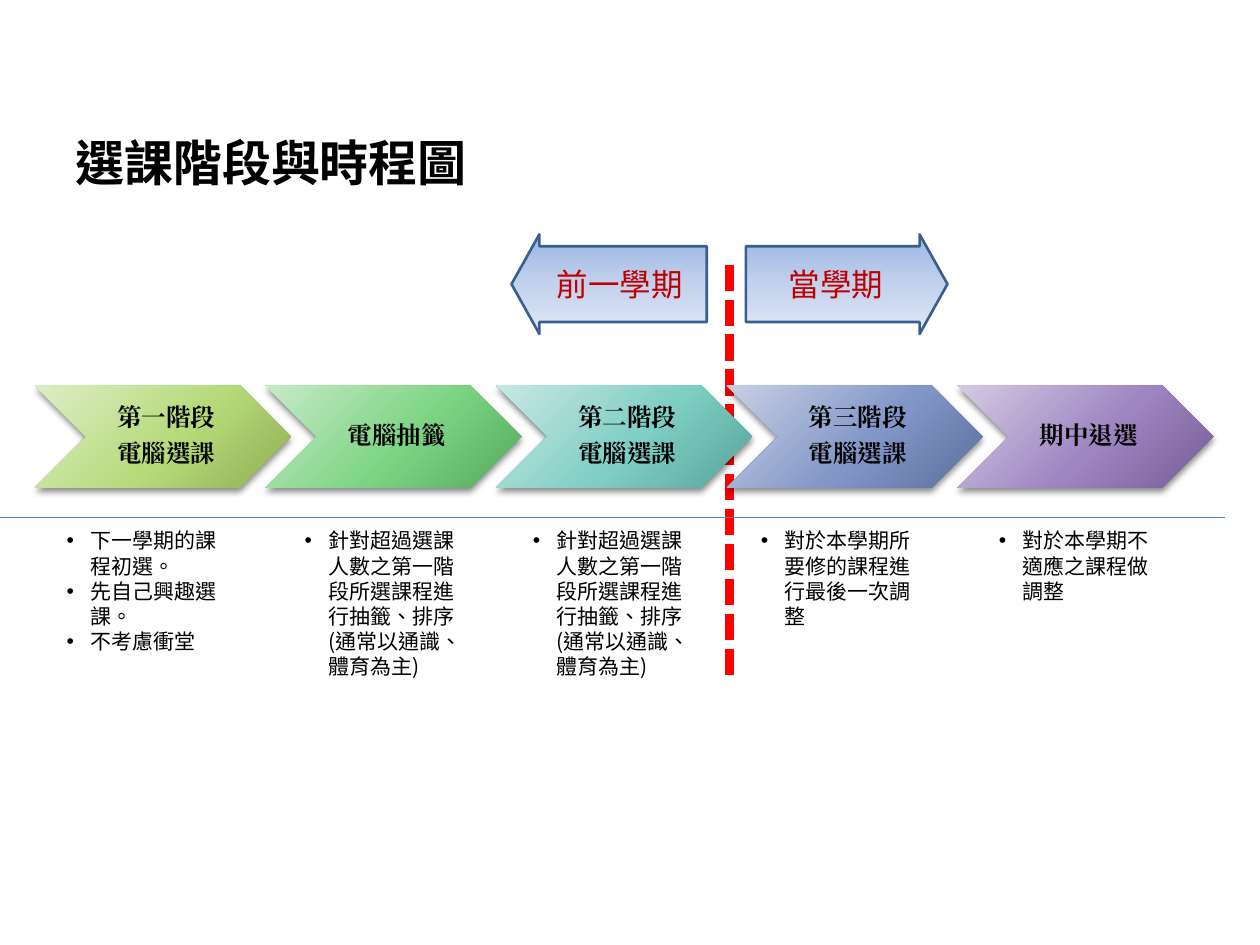
from dataclasses import dataclass

from lxml import etree
from pptx import Presentation, util as u
from pptx.dml.color import RGBColor
from pptx.enum import dml, shapes, text
from pptx.oxml.ns import qn

W, H = 10, 7.5
STEP, LEFT, TOP = 0.183 * W, 0.028 * W, 0.408 * H
CHEVRON_W, CHEVRON_H = 0.203 * W, 0.108 * H
SANS, SERIF = "Noto Sans CJK SC", "Times New Roman"
LOTTERY = "針對超過選課人數之第一階段所選課程進行抽籤、排序(通常以通識、體育為主)"


@dataclass
class Stage:
    """One column of the timeline."""
    label: list[str]
    colors: tuple[str, str, str]
    details: list[str]
    detail_x: float
    detail_h: float


@dataclass
class Term:
    """One arrow that names a semester."""
    label: str
    x: float
    width: float
    flipped: bool


STAGES = [
    Stage(["第一階段", "電腦選課"], ("DDEDC6", "B6DA79", "90AE53"),
          ["下一學期的課程初選。", "先自己興趣選課。", "不考慮衝堂"], 0.043, 0.148),
    Stage(["電腦抽籤"], ("C7EAC9", "7CD483", "55A95E"), [LOTTERY], 0.232, 0.175),
    Stage(["第二階段", "電腦選課"], ("C8E7E3", "7ECEC4", "58A39B"), [LOTTERY], 0.413, 0.175),
    Stage(["第三階段", "電腦選課"], ("C9D0E5", "8296C7", "5A709D"),
          ["對於本學期所要修的課程進行最後一次調整"], 0.594, 0.121),
    Stage(["期中退選"], ("D4CBE2", "9E85C1", "775D97"),
          ["對於本學期不適應之課程做調整"], 0.783, 0.095),
]
TERMS = [Term("當學期", 0.592, 0.16, False), Term("前一學期", 0.406, 0.155, True)]


def rgb(color: str) -> RGBColor:
    """Turn a hex string into a colour."""
    return RGBColor.from_string(color)


def add(parent, tag: str, **attrs):
    """Append a drawing element with its attributes."""
    return etree.SubElement(parent, qn(f"a:{tag}"), {k: str(v) for k, v in attrs.items()})


def box(x: float, y: float, w: float, h: float) -> list:
    """Convert a frame in inches to lengths."""
    return [u.Inches(round(v, 2)) for v in (x, y, w, h)]


def write(sp, lines: list[str], size: float, font=SANS, color="000000", bold=False,
          align=text.PP_ALIGN.LEFT, anchor=text.MSO_ANCHOR.TOP, spacing=None,
          after=None, bullet=False, insets=(0.1, 0.05, 0.1, 0.05)) -> None:
    """Fill a shape with formatted paragraphs."""
    tf = sp.text_frame
    tf.word_wrap, tf.vertical_anchor = True, anchor
    tf.margin_left, tf.margin_top, tf.margin_right, tf.margin_bottom = map(u.Inches, insets)
    for i, line in enumerate(lines):
        p = tf.add_paragraph() if i else tf.paragraphs[0]
        p.alignment = align
        if spacing:
            p.line_spacing = spacing
        pPr = p._p.get_or_add_pPr()
        if after:
            add(add(pPr, "spcAft"), "spcPct", val=after * 1000)
        if bullet:
            pPr.set("marL", str(u.Inches(0.19)))
            pPr.set("indent", str(-u.Inches(0.19)))
            add(pPr, "buFont", typeface="Arial")
            add(pPr, "buChar", char="•")
        r = p.add_run()
        r.text = line
        r.font.size, r.font.bold, r.font.name = u.Pt(size), bold, font
        r.font.color.rgb = rgb(color)
        rPr = r._r.get_or_add_rPr()
        rPr.set("lang", "zh-TW")
        add(rPr, "ea", typeface=font)


def gradient(sp, stops: list[tuple[int, str]], radial: bool) -> None:
    """Give a shape a vertical or a corner-lit gradient."""
    sp.fill.gradient()
    grad = sp._element.spPr.find(qn("a:gradFill"))
    grad.clear()
    grad.set("rotWithShape", "1")
    stop_list = add(grad, "gsLst")
    for pos, color in stops:
        add(add(stop_list, "gs", pos=pos * 1000), "srgbClr", val=color)
    if radial:
        add(add(grad, "path", path="circle"), "fillToRect", l=-40000, t=-90000, r=140000, b=190000)
    else:
        add(grad, "lin", ang=90 * 60000, scaled=0)


def add_line(slide, ends: tuple, color: str, width: float, dash=None) -> None:
    """Draw a straight line."""
    c = slide.shapes.add_connector(shapes.MSO_CONNECTOR.STRAIGHT, *box(*ends))
    c.line.color.rgb, c.line.width = rgb(color), u.Pt(width)
    if dash:
        c.line.dash_style = dash
    add(c._element.spPr, "effectLst")


def add_stage(slide, i: int, stage: Stage) -> None:
    """Draw a chevron with its label."""
    x = LEFT + i * STEP
    sp = slide.shapes.add_shape(shapes.MSO_SHAPE.CHEVRON, *box(x, TOP, CHEVRON_W, CHEVRON_H))
    gradient(sp, list(zip((0, 55, 100), stage.colors)), radial=True)
    sp.line.fill.background()
    sp.shadow.inherit = False
    effects = sp._element.spPr.find(qn("a:effectLst"))
    shadow = add(effects, "outerShdw", blurRad=u.Pt(4), dist=u.Pt(2), dir=90 * 60000, rotWithShape=0)
    add(add(shadow, "srgbClr", val="000000"), "alpha", val=45000)
    label = slide.shapes.add_textbox(*box(x + CHEVRON_W / 5, TOP, CHEVRON_W * 0.6, CHEVRON_H))
    write(label, stage.label, 14, font=SERIF, bold=True, align=text.PP_ALIGN.CENTER,
          anchor=text.MSO_ANCHOR.MIDDLE, spacing=0.9, after=35, insets=(0.06, 0.02, 0.02, 0.02))


def add_details(slide, stage: Stage) -> None:
    """Write the bullets below a chevron."""
    sp = slide.shapes.add_textbox(*box(stage.detail_x * W, 0.552 * H, 0.142 * W, stage.detail_h * H))
    write(sp, stage.details, 12, bullet=True)


def add_term(slide, term: Term) -> None:
    """Draw a semester arrow."""
    sp = slide.shapes.add_shape(shapes.MSO_SHAPE.RIGHT_ARROW,
                                *box(term.x * W, 0.248 * H, term.width * W, 0.105 * H))
    sp.adjustments[0], sp.adjustments[1] = 0.76, 0.28
    gradient(sp, [(0, "9AB5E4"), (50, "C2D1ED"), (100, "E1E8F5")], radial=False)
    sp.line.color.rgb, sp.line.width = rgb("3A5F8C"), u.Pt(1.5)
    sp.shadow.inherit = False
    if term.flipped:
        sp._element.spPr.find(qn("a:xfrm")).set("flipH", "1")
    write(sp, [term.label], 18, color="C00000", align=text.PP_ALIGN.CENTER,
          anchor=text.MSO_ANCHOR.MIDDLE)


def main() -> None:
    """Build and save the course selection timeline."""
    prs = Presentation()
    prs.slide_width, prs.slide_height = u.Inches(W), u.Inches(H)
    slide = prs.slides.add_slide(prs.slide_layouts[6])
    add_line(slide, (5.79, 2.1, 5.79, 5.4), "FF0000", 5, dml.MSO_LINE.SQUARE_DOT)
    for i, stage in enumerate(STAGES):
        add_stage(slide, i, stage)
    title = slide.shapes.add_textbox(*box(0.05 * W, 1, 0.9 * W, 1))
    write(title, ["選課階段與時程圖"], 28, bold=True)
    for term in TERMS:
        add_term(slide, term)
    add_line(slide, (0, 4.11, 9.72, 4.11), "4F81BD", 0.75)
    for stage in STAGES:
        add_details(slide, stage)
    prs.save("out.pptx")


if __name__ == "__main__":
    main()
